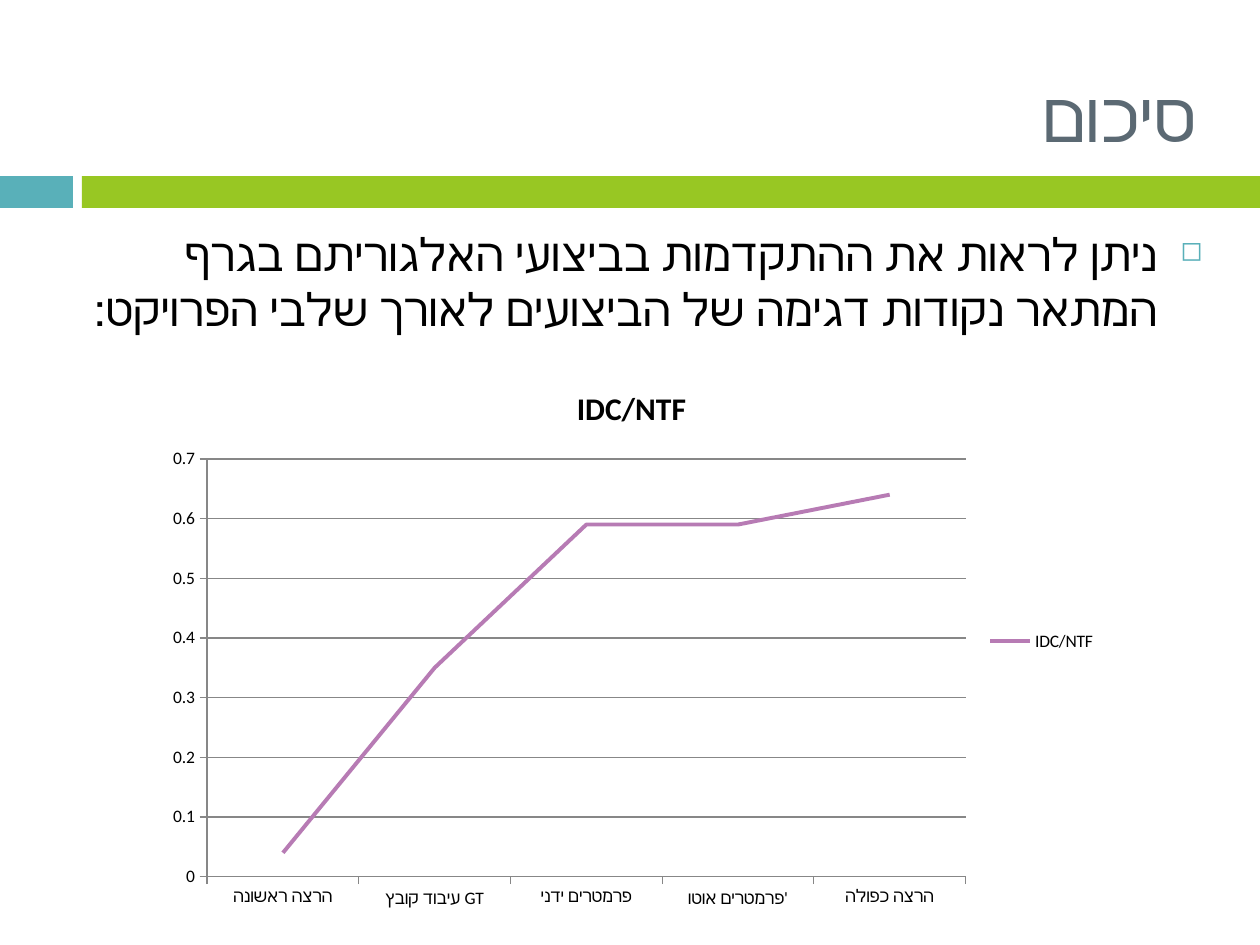
from lxml import etree
from pptx import Presentation
from pptx.chart.data import CategoryChartData
from pptx.dml.color import RGBColor
from pptx.enum.chart import XL_CHART_TYPE, XL_LEGEND_POSITION, XL_MARKER_STYLE, XL_TICK_MARK
from pptx.enum.shapes import MSO_SHAPE
from pptx.enum.text import MSO_ANCHOR, PP_ALIGN
from pptx.oxml.ns import qn
from pptx.util import Pt

LINE, RECT = XL_CHART_TYPE.LINE, MSO_SHAPE.RECTANGLE
RIGHT, OUTSIDE = PP_ALIGN.RIGHT, XL_TICK_MARK.OUTSIDE
TOP, MIDDLE = MSO_ANCHOR.TOP, MSO_ANCHOR.MIDDLE

TEAL = RGBColor(0x59, 0xB0, 0xB9)
GREEN = RGBColor(0x98, 0xC7, 0x23)
SLATE = RGBColor(0x5B, 0x69, 0x73)
BLACK = RGBColor(0, 0, 0)
PURPLE = RGBColor(0xB7, 0x7B, 0xB4)
GRAY = RGBColor(0x87, 0x87, 0x87)
TEXT_FONT, CHART_FONT = "Courier New", "Calibri"

# Content
TITLE = "סיכום"
BODY = ("ניתן לראות את ההתקדמות בביצועי האלגוריתם בגרף המתאר "
        "נקודות דגימה של הביצועים לאורך שלבי הפרויקט:")
SERIES = "IDC/NTF"
RESULTS = [
    ("הרצה ראשונה", 0.04),
    ("עיבוד קובץ GT", 0.35),
    ("פרמטרים ידני", 0.59),
    ("פרמטרים אוטו'", 0.59),
    ("הרצה כפולה", 0.64),
]

# Layout in px, 126 to the inch
WIDTH, HEIGHT = 1260, 945
BAR_TOP, BAR_HEIGHT = 176, 32
BARS = [(0, 73, TEAL), (82, WIDTH, GREEN)]
TITLE_BOX = (84, 55, 1124, 118)
BODY_BOX = (84, 221, 1124, 688)
CHART_BOX = (154, 363, 955, 557)
INSET, INDENT = 5, 44


def px(n):
    return round(n * 914400 / 126)


def add_rtl_text(slide, box, text, size, color, anchor):
    s = slide.shapes.add_textbox(*map(px, box))
    tf = s.text_frame
    tf.word_wrap = True
    tf.vertical_anchor = anchor
    p = tf.paragraphs[0]
    p.alignment = RIGHT
    p._p.get_or_add_pPr().set("rtl", "1")
    r = p.add_run()
    r.text = text
    r.font.size, r.font.name = Pt(size), TEXT_FONT
    r.font.color.rgb = color
    return tf


def add_bullet(p, char, color, percent):
    pPr = p._p.get_or_add_pPr()
    pPr.set("marL", str(px(INDENT)))
    pPr.set("indent", str(-px(INDENT)))
    clr = etree.SubElement(pPr, qn("a:buClr"))
    etree.SubElement(clr, qn("a:srgbClr"), val=str(color))
    etree.SubElement(pPr, qn("a:buSzPct"), val=str(percent * 1000))
    etree.SubElement(pPr, qn("a:buChar"), char=char)


def add_results_chart(slide):
    data = CategoryChartData()
    data.categories = [name for name, _ in RESULTS]
    data.add_series(SERIES, [value for _, value in RESULTS])
    chart = slide.shapes.add_chart(LINE, *map(px, CHART_BOX), data).chart
    chart.font.name, chart.font.size = CHART_FONT, Pt(10)
    chart.font.color.rgb = BLACK

    chart.has_title = True
    tf = chart.chart_title.text_frame
    tf.text = SERIES
    font = tf.paragraphs[0].runs[0].font
    font.name, font.size, font.bold = CHART_FONT, Pt(18), True
    font.color.rgb = BLACK

    chart.has_legend = True
    chart.legend.position = XL_LEGEND_POSITION.RIGHT
    chart.legend.include_in_layout = False

    for axis in (chart.category_axis, chart.value_axis):
        axis.major_tick_mark = OUTSIDE
        axis.format.line.color.rgb = GRAY
    axis = chart.value_axis
    axis.minimum_scale, axis.maximum_scale, axis.major_unit = 0, 0.7, 0.1
    axis.has_major_gridlines = True
    axis.major_gridlines.format.line.color.rgb = GRAY

    chart.plots[0].vary_by_categories = False
    line = chart.plots[0].series[0]
    line.smooth = False
    line.marker.style = XL_MARKER_STYLE.NONE
    line.format.line.color.rgb = PURPLE
    line.format.line.width = Pt(2.25)


def main():
    prs = Presentation()
    prs.slide_width, prs.slide_height = px(WIDTH), px(HEIGHT)
    slide = prs.slides.add_slide(prs.slide_layouts[6])

    # Divider bars
    for left, right, color in BARS:
        s = slide.shapes.add_shape(
            RECT, px(left), px(BAR_TOP), px(right - left), px(BAR_HEIGHT))
        s.shadow.inherit = False
        s.fill.solid()
        s.fill.fore_color.rgb = color
        s.line.fill.background()

    # Title and bullet
    add_rtl_text(slide, TITLE_BOX, TITLE, 40, SLATE, MIDDLE)
    tf = add_rtl_text(slide, BODY_BOX, BODY, 26, BLACK, TOP)
    tf.margin_left = tf.margin_right = px(INSET)
    tf.margin_top = tf.margin_bottom = px(INSET)
    tf.paragraphs[0].space_before = Pt(7)
    add_bullet(tf.paragraphs[0], "◻", TEAL, 60)

    # Progress chart
    add_results_chart(slide)
    prs.save("out.pptx")


if __name__ == "__main__":
    main()
